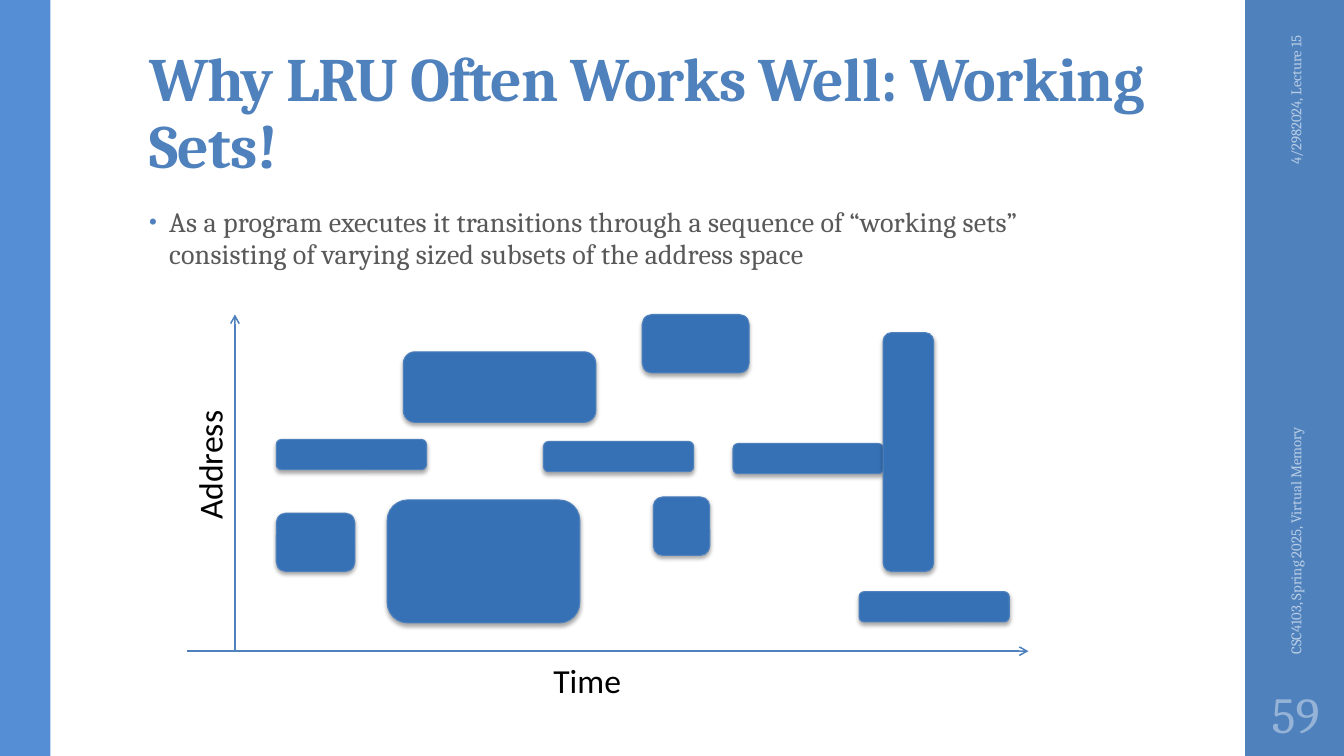
from dataclasses import dataclass

from pptx import Presentation
from pptx import util as u
from pptx.dml.color import RGBColor
from pptx.enum import shapes, text
from pptx.oxml import parse_xml
from pptx.oxml.ns import nsdecls


@dataclass(frozen=True)
class Theme:
    accent: str = "4F81BD"
    left_bar: str = "558ED5"
    block: str = "3771B5"
    body: str = "595959"
    footer: str = "B9CDE5"
    number: str = "95B3D7"
    label: str = "000000"
    serif: str = "Cambria"
    sans: str = "Calibri"
    title_size: float = 44
    body_size: float = 20
    footer_size: float = 10.5
    number_size: float = 36
    label_size: float = 24


theme = Theme()
Align, Anchor = text.PP_ALIGN, text.MSO_ANCHOR
rgb = RGBColor.from_string

prs = Presentation()
prs.slide_width, prs.slide_height = u.Inches(13.33), u.Inches(7.5)
s = prs.slides.add_slide(prs.slide_layouts[6])


def add_text(words, box, size, color, font=theme.serif, bold=False, align=Align.LEFT,
             anchor=Anchor.TOP, insets=(0.1, 0.05, 0.1, 0.05), rotation=0,
             wrap=True, line_spacing=1.0, tracking=0):
    """Add a one-paragraph text box; tracking is in hundredths of a point."""
    sp = s.shapes.add_textbox(*map(u.Inches, box))
    sp.rotation = rotation
    tf = sp.text_frame
    tf.word_wrap = wrap
    tf.auto_size = text.MSO_AUTO_SIZE.NONE if wrap else text.MSO_AUTO_SIZE.SHAPE_TO_FIT_TEXT
    tf.vertical_anchor = anchor
    tf.margin_left, tf.margin_top, tf.margin_right, tf.margin_bottom = map(u.Inches, insets)
    p = tf.paragraphs[0]
    p.alignment, p.line_spacing = align, line_spacing
    r = p.add_run()
    r.text = words
    r.font.name, r.font.size, r.font.bold = font, u.Pt(size), bold
    r.font.color.rgb = rgb(color)
    if tracking:
        r.font._element.set("spc", str(tracking))
    return p


def add_box(kind, box, fill, line=None):
    sp = s.shapes.add_shape(kind, *map(u.Inches, box))
    sp.shadow.inherit = False
    sp.fill.solid()
    sp.fill.fore_color.rgb = rgb(fill)
    if line:
        sp.line.color.rgb = rgb(line)
        sp.line.width = u.Pt(0.75)
    else:
        sp.line.fill.background()
    return sp


# Side bars
add_box(shapes.MSO_SHAPE.RECTANGLE, (12.35, 0, 1, 7.5), theme.accent)
add_box(shapes.MSO_SHAPE.RECTANGLE, (0, 0, 0.5, 7.5), theme.left_bar)

# Title and bullet
add_text("Why LRU Often Works Well: Working Sets!", (1.38, 0.32, 10.6, 1.53),
         theme.title_size, theme.accent, bold=True, anchor=Anchor.BOTTOM,
         insets=(0.1, 0.03, 0.1, 0.05), line_spacing=0.9, tracking=-50)
p = add_text("As a program executes it transitions through a sequence of “working sets” "
             "consisting of varying sized subsets of the address space",
             (1.38, 2, 9.4, 4.76), theme.body_size, theme.body,
             line_spacing=0.95, tracking=10)
p.space_before, p.space_after = u.Pt(14), u.Pt(2)
pPr = p._p.get_or_add_pPr()
pPr.set("marL", str(u.Inches(0.2)))
pPr.set("indent", str(u.Inches(-0.2)))
for bullet in (f'<a:buClr {nsdecls("a")}><a:srgbClr val="{theme.accent}"/></a:buClr>',
               f'<a:buSzPct {nsdecls("a")} val="80000"/>',
               f'<a:buFont {nsdecls("a")} typeface="Arial"/>',
               f'<a:buChar {nsdecls("a")} char="•"/>'):
    pPr.append(parse_xml(bullet))

# Date, footer and slide number
add_text("4/2982024, Lecture 15", (11.81, 1.09, 2.08, 0.4), theme.footer_size,
         theme.footer, align=Align.RIGHT, anchor=Anchor.MIDDLE, rotation=270)
add_text("CSC4103, Spring 2025, Virtual Memory", (10.89, 4.43, 3.92, 0.4),
         theme.footer_size, theme.footer, anchor=Anchor.MIDDLE, rotation=270)
add_text("59", (12.35, 6.75, 1, 0.65), theme.number_size, theme.number,
         align=Align.CENTER, anchor=Anchor.MIDDLE, insets=(0.05,) * 4)

# Axes
for axis in ((1.85, 6.46, 10.2, 6.46), (2.33, 6.46, 2.33, 3.12)):
    cx = s.shapes.add_connector(shapes.MSO_CONNECTOR.STRAIGHT, *map(u.Inches, axis))
    cx.line.color.rgb = rgb(theme.accent)
    cx.line.width = u.Pt(1.1)
    cx.line._get_or_add_ln().append(parse_xml(f'<a:tailEnd {nsdecls("a")} type="arrow"/>'))
    cx._element.spPr.append(parse_xml(f'<a:effectLst {nsdecls("a")}/>'))
add_text("Time", (5.39, 6.5, 0.9, 0.5), theme.label_size, theme.label,
         font=theme.sans, wrap=False)
add_text("Address", (1.42, 4.35, 1.31, 0.5), theme.label_size, theme.label,
         font=theme.sans, wrap=False, rotation=270)

# Working sets: left, top, width, height
working_sets = [
    (2.74, 5.09, 0.78, 0.58),
    (2.74, 4.36, 1.49, 0.3),
    (3.84, 4.96, 1.91, 1.22),
    (4, 3.49, 1.91, 0.7),
    (5.39, 4.38, 1.49, 0.3),
    (6.48, 4.93, 0.56, 0.58),
    (6.37, 3.12, 1.06, 0.58),
    (7.27, 4.4, 1.49, 0.3),
    (8.76, 3.3, 0.5, 2.37),
    (8.52, 5.87, 1.49, 0.3),
]
for box in working_sets:
    sp = add_box(shapes.MSO_SHAPE.ROUNDED_RECTANGLE, box, theme.block, theme.accent)
    effects = sp._element.spPr.find("{http://schemas.openxmlformats.org/drawingml/2006/main}effectLst")
    effects.append(parse_xml(
        f'<a:outerShdw {nsdecls("a")} blurRad="{u.Pt(3.1)}" dist="{u.Pt(1.8)}" dir="5400000" '
        'rotWithShape="0"><a:srgbClr val="000000"><a:alpha val="35000"/></a:srgbClr></a:outerShdw>'))

prs.save("out.pptx")
